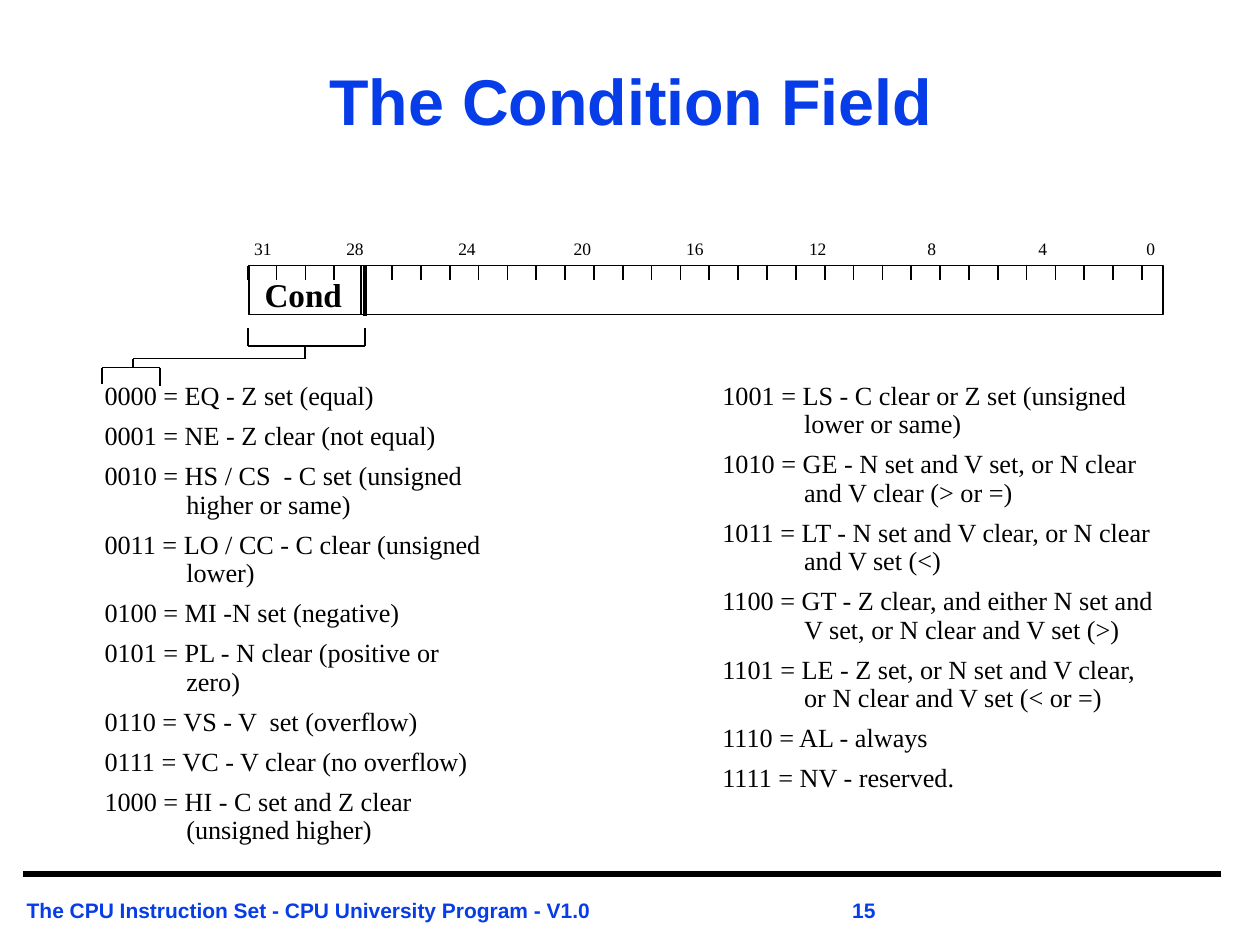
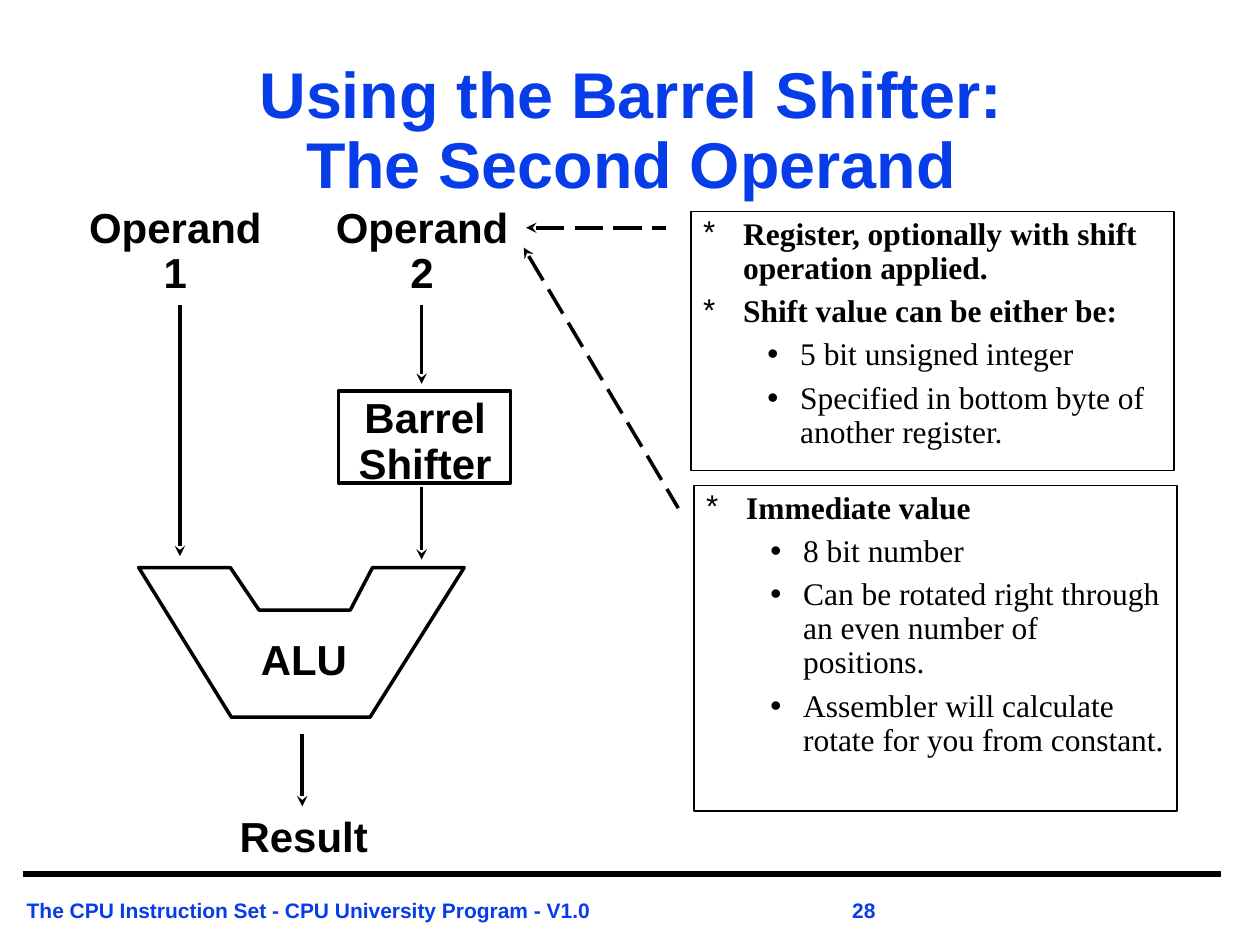
"""Build two slides on condition codes and the barrel shifter."""
from lxml.etree import SubElement
from pptx import Presentation
from pptx.dml.color import RGBColor
from pptx.enum.dml import MSO_LINE
from pptx.enum.shapes import MSO_CONNECTOR, MSO_SHAPE
from pptx.enum.text import MSO_ANCHOR, MSO_AUTO_SIZE, PP_ALIGN
from pptx.oxml.ns import qn
from pptx.util import Cm, Pt

COLORS = {"accent": "063DE8", "ink": "000000"}
SANS, SERIF = "Arial", "Times New Roman"
INK = RGBColor.from_string(COLORS["ink"])
TIGHT = (0.18, 0.08)


def write(frame, text, size=24, font=SANS, color="ink", bold=False, align=PP_ALIGN.LEFT,
          spacing=0.9, before=0, left=0, hanging=0, bullet=None, level=0,
          inset=(0.25, 0.13), wrap=True):
    """Append one formatted paragraph to a text frame."""
    frame.auto_size = MSO_AUTO_SIZE.NONE
    frame.word_wrap = wrap
    frame.margin_left = frame.margin_right = Cm(inset[0])
    frame.margin_top = frame.margin_bottom = Cm(inset[1])
    first = not frame.paragraphs[0].runs
    paragraph = frame.paragraphs[0] if first else frame.add_paragraph()
    paragraph.text = text
    paragraph.level = level
    paragraph.alignment = align
    paragraph.line_spacing = spacing
    paragraph.space_before = Pt(0 if first else before)
    props = paragraph._p.get_or_add_pPr()
    props.set("marL", str(Cm(left)))
    props.set("indent", str(-Cm(hanging)))
    if bullet:
        SubElement(props, qn("a:buFont"), typeface=SANS)
        SubElement(props, qn("a:buChar"), char=bullet)
    else:
        SubElement(props, qn("a:buNone"))
    for run in paragraph.runs:
        run.font.size = Pt(size)
        run.font.name = font
        run.font.bold = bold
        run.font.color.rgb = RGBColor.from_string(COLORS[color])


def draw_line(slide, start, end, width=1, arrow=None, dash=None):
    """Draw a straight line, with an arrowhead at headEnd or tailEnd if asked."""
    connector = slide.shapes.add_connector(MSO_CONNECTOR.STRAIGHT, *map(Cm, start + end))
    connector.line.color.rgb = INK
    connector.line.width = Pt(width)
    if dash:
        connector.line.dash_style = dash
    if arrow:
        SubElement(connector.line._get_or_add_ln(), qn("a:" + arrow), type="stealth")
    SubElement(connector._element.spPr, qn("a:effectLst"))


prs = Presentation()
prs.slide_width, prs.slide_height = Cm(25.43), Cm(19.08)

slides = []
for heading, number, heading_top in [
    ("The Condition Field", "15", 0.46),
    ("Using the Barrel Shifter:\vThe Second Operand", "28", 1.02),
]:
    slide = prs.slides.add_slide(prs.slide_layouts[3])
    title = slide.shapes.title
    title.left, title.top, title.width, title.height = map(Cm, (2.66, heading_top, 20.15, 3.3))
    title.text_frame.vertical_anchor = MSO_ANCHOR.MIDDLE
    write(title.text_frame, heading, size=37, color="accent", bold=True, align=PP_ALIGN.CENTER)
    draw_line(slide, (0.46, 17.65), (24.64, 17.65), width=3.75)
    for footer, left, width in [
        ("The CPU Instruction Set - CPU University Program - V1.0", 0.36, 15),
        (number, 17.02, 2),
    ]:
        box = slide.shapes.add_textbox(Cm(left), Cm(17.96), Cm(width), Cm(0.74))
        write(box.text_frame, footer, size=12, color="accent", bold=True, spacing=1.18, inset=TIGHT)
    slides.append(slide)
condition, shifter = slides

for slide, bounds, weight in [
    (condition, (5.03, 5.36, 2.26, 0.99), 1),
    (condition, (5.03, 5.36, 18.44, 0.99), 1),
    (shifter, (6.83, 7.9, 3.48, 1.85), 2),
]:
    outline = slide.shapes.add_shape(MSO_SHAPE.RECTANGLE, *map(Cm, bounds))
    outline.shadow.inherit = False
    outline.fill.background()
    outline.line.color.rgb = INK
    outline.line.width = Pt(weight)

for tick in range(32):
    x = 5 + 18.05 * tick / 31
    if tick != 4:
        draw_line(condition, (x, 5.38), (x, 5.66))
draw_line(condition, (7.37, 5.38), (7.37, 6.38), width=2)

bit_lefts = {31: 4.95, 28: 6.81, 24: 9.07, 20: 11.4, 16: 13.67, 12: 16.15, 8: 18.54, 4: 20.78, 0: 22.96}
for bit, left in bit_lefts.items():
    label = condition.shapes.add_textbox(Cm(left), Cm(4.72), Cm(0.71), Cm(0.58))
    write(label.text_frame, str(bit), size=10, font=SERIF, spacing=1, inset=TIGHT, wrap=False)

cond = condition.shapes.add_textbox(Cm(5.16), Cm(5.56), Cm(1.93), Cm(0.86))
write(cond.text_frame, "Cond", size=19, font=SERIF, bold=True, inset=TIGHT, wrap=False)

for bracket in [
    [(5, 6.63), (5, 6.99), (7.37, 6.99), (7.37, 6.63)],
    [(6.15, 6.99), (6.15, 7.24), (2.69, 7.24), (2.69, 7.42)],
    [(2.06, 7.75), (2.06, 7.42), (3.23, 7.42), (3.23, 7.8)],
]:
    for start, end in zip(bracket, bracket[1:]):
        draw_line(condition, start, end)

code_columns = [
    (1, (1.93, 7.65, 8.31, 9.78), [
        "0000 = EQ - Z set (equal)",
        "0001 = NE - Z clear (not equal)",
        "0010 = HS / CS  - C set (unsigned higher or same)",
        "0011 = LO / CC - C clear (unsigned lower)",
        "0100 = MI -N set (negative)",
        "0101 = PL - N clear (positive or zero)",
        "0110 = VS - V  set (overflow)",
        "0111 = VC - V clear (no overflow)",
        "1000 = HI - C set and Z clear (unsigned higher)",
    ]),
    (2, (14.4, 7.65, 9.22, 8.74), [
        "1001 = LS - C clear or Z set (unsigned lower or same)",
        "1010 = GE - N set and V set, or N clear and V clear (> or =)",
        "1011 = LT - N set and V clear, or N clear and V set (<)",
        "1100 = GT - Z clear, and either N set and V set, or N clear and V set (>)",
        "1101 = LE - Z set, or N set and V clear, or N clear and V set (< or =)",
        "1110 = AL - always",
        "1111 = NV - reserved.",
    ]),
]
for index, bounds, codes in code_columns:
    column = condition.placeholders[index]
    column.left, column.top, column.width, column.height = map(Cm, bounds)
    for code in codes:
        write(column.text_frame, code, size=15, font=SERIF, before=6.75,
              left=1.65, hanging=1.65, inset=TIGHT)

operand_kinds = [
    (1, (13.94, 4.27, 9.75, 5.23), [
        (0, "Register, optionally with shift operation applied."),
        (0, "Shift value can be either be:"),
        (1, "5 bit unsigned integer"),
        (1, "Specified in bottom byte of another register."),
    ]),
    (2, (14, 9.8, 9.75, 6.58), [
        (0, "Immediate value"),
        (1, "8 bit number"),
        (1, "Can be rotated right through an even number of positions."),
        (1, "Assembler will calculate rotate for you from constant."),
    ]),
]
bullet_styles = [
    {"bullet": "*", "bold": True, "left": 0.81, "hanging": 0.81},
    {"bullet": "•", "left": 1.96, "hanging": 0.66},
]
for index, bounds, points in operand_kinds:
    kind = shifter.placeholders[index]
    kind.left, kind.top, kind.width, kind.height = map(Cm, bounds)
    kind.line.color.rgb = INK
    kind.line.width = Pt(1)
    for level, point in points:
        write(kind.text_frame, point, size=18, font=SERIF, before=5.4, level=level,
              **bullet_styles[level])

alu_corners = [(2.8, 11.46), (4.65, 11.46), (5.23, 12.32), (7.07, 12.32),
               (7.52, 11.46), (9.37, 11.46), (7.47, 14.48), (4.67, 14.48)]
corners = [(Cm(x), Cm(y)) for x, y in alu_corners]
builder = shifter.shapes.build_freeform(*corners[0])
builder.add_line_segments(corners[1:], close=True)
alu = builder.convert_to_shape()
alu.shadow.inherit = False
alu.fill.background()
alu.line.color.rgb = INK
alu.line.width = Pt(2)

for part, bounds in [
    ("Operand 1", (1.52, 4.06, 4.04, 2.08)),
    ("Operand 2", (6.5, 4.06, 4.04, 2.08)),
    ("Barrel Shifter", (6.93, 7.9, 3.3, 2.08)),
    ("ALU", (4.93, 12.78, 2.41, 1.17)),
    ("Result", (4.11, 16.36, 4.04, 1.17)),
]:
    label = shifter.shapes.add_textbox(*map(Cm, bounds))
    write(label.text_frame, part, bold=True, align=PP_ALIGN.CENTER)

for x, top, bottom in [(3.63, 6.15, 11.23), (8.51, 6.15, 7.75), (8.51, 9.83, 11.3), (6.1, 14.81, 16.28)]:
    draw_line(shifter, (x, top), (x, bottom), width=2, arrow="tailEnd")
for start, end in [((10.62, 4.6), (13.44, 4.6)), ((10.57, 5), (13.69, 10.26))]:
    draw_line(shifter, start, end, width=2, arrow="headEnd", dash=MSO_LINE.LONG_DASH)

prs.save("out.pptx")
